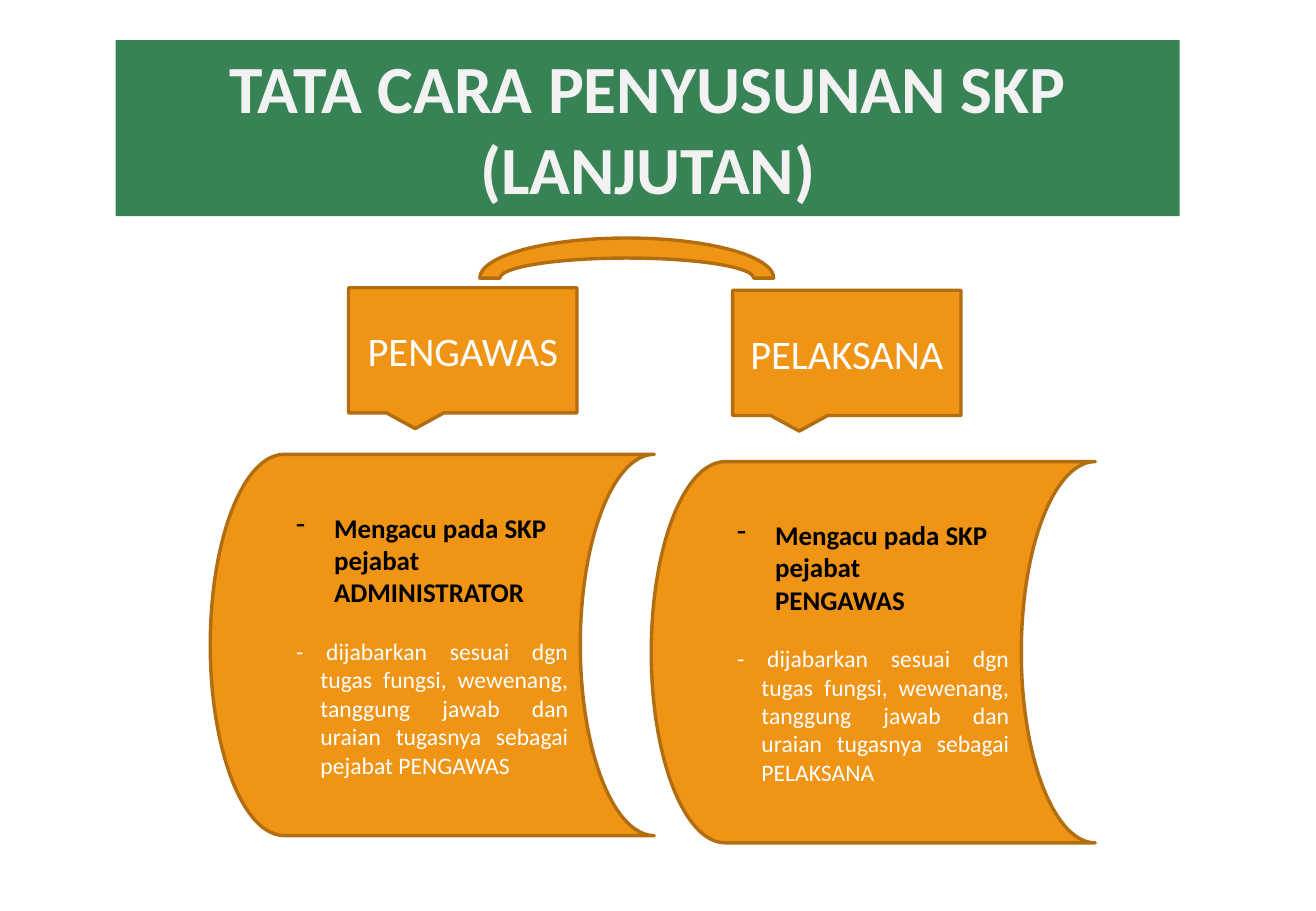
import copy
import pptx
import pptx.dml.color
import pptx.enum.shapes
import pptx.enum.text
import pptx.oxml
import pptx.oxml.ns
import pptx.util

Pt = pptx.util.Pt
KIND = pptx.enum.shapes.MSO_SHAPE
ALIGN = pptx.enum.text.PP_ALIGN
ANCHOR = pptx.enum.text.MSO_ANCHOR
COLORS = {
    "orange": "F09415",
    "brown": "B26D10",
    "green": "388356",
    "pale": "F2F2F2",
    "white": "FFFFFF",
    "black": "000000",
}


def paint(name):
    return pptx.dml.color.RGBColor.from_string(COLORS[name])


def draw(slide, kind, box, fill="orange", line="brown"):
    shape = slide.shapes.add_shape(kind, *[Pt(side) for side in box])
    shape.shadow.inherit = False
    shape.fill.solid()
    shape.fill.fore_color.rgb = paint(fill)
    if line:
        shape.line.color.rgb = paint(line)
        shape.line.width = Pt(2)
    else:
        shape.line.fill.background()
    shape.text_frame.word_wrap = True
    return shape


def write(para, text, size=14, color="white", bold=False, align=ALIGN.LEFT,
          hang=0, bullet=None, before=0):
    props = para._p.get_or_add_pPr()
    if hang:
        props.set("marL", str(Pt(hang)))
        props.set("indent", str(Pt(-hang)))
    if bullet:
        mark = pptx.oxml.parse_xml(
            f'<a:buChar {pptx.oxml.ns.nsdecls("a")} char="{bullet}"/>')
        props.append(mark)
    para.alignment = align
    if before:
        para.space_before = Pt(before)
    for index, part in enumerate(text.splitlines()):
        if index:
            para.add_line_break()
        run = para.add_run()
        run.text = part
        font = run.font
        font.name = "Calibri"
        font.size = Pt(size)
        font.bold = bold
        font.color.rgb = paint(color)
    for gap in para._p.findall(pptx.oxml.ns.qn("a:br")):
        gap.append(copy.deepcopy(run._r.rPr))


def title(slide, box, text):
    shape = draw(slide, KIND.RECTANGLE, box, "green", None)
    frame = shape.text_frame
    frame.vertical_anchor = ANCHOR.TOP
    write(frame.paragraphs[0], text, size=40, color="pale", bold=True,
          align=ALIGN.CENTER)


def label(slide, box, text):
    frame = draw(slide, KIND.RECTANGULAR_CALLOUT, box).text_frame
    frame.vertical_anchor = ANCHOR.MIDDLE
    write(frame.paragraphs[0], text, size=24, align=ALIGN.CENTER)


def panel(slide, box, source, duty):
    frame = draw(slide, KIND.FLOWCHART_STORED_DATA, box).text_frame
    frame.vertical_anchor = ANCHOR.MIDDLE
    write(frame.paragraphs[0], f"""Mengacu pada SKP pejabat
{source}""", size=16, color="black", bold=True, hang=22.5, bullet="-")
    write(frame.add_paragraph(),
          "- dijabarkan sesuai dgn tugas fungsi, wewenang, tanggung jawab "
          f"dan uraian tugasnya sebagai {duty}",
          align=ALIGN.JUSTIFY, hang=14.4, before=17)


def main():
    deck = pptx.Presentation()
    deck.slide_width, deck.slide_height = Pt(780), Pt(540)
    slide = deck.slides.add_slide(deck.slide_layouts[6])
    label(slide, (206.6, 170.6, 135.4, 74.2), "PENGAWAS")
    panel(slide, (124.6, 269.3, 263.2, 226), "ADMINISTRATOR",
          "pejabat PENGAWAS")
    panel(slide, (386, 273.6, 263.2, 226), "PENGAWAS", "PELAKSANA")
    label(slide, (434.2, 172.1, 135.4, 74.2), "PELAKSANA")
    draw(slide, KIND.BLOCK_ARC, (284.4, 141.1, 174.2, 47.5))
    title(slide, (68.6, 23.8, 630.7, 104.4),
          "TATA CARA PENYUSUNAN SKP (LANJUTAN)")
    deck.save("out.pptx")


if __name__ == "__main__":
    main()
